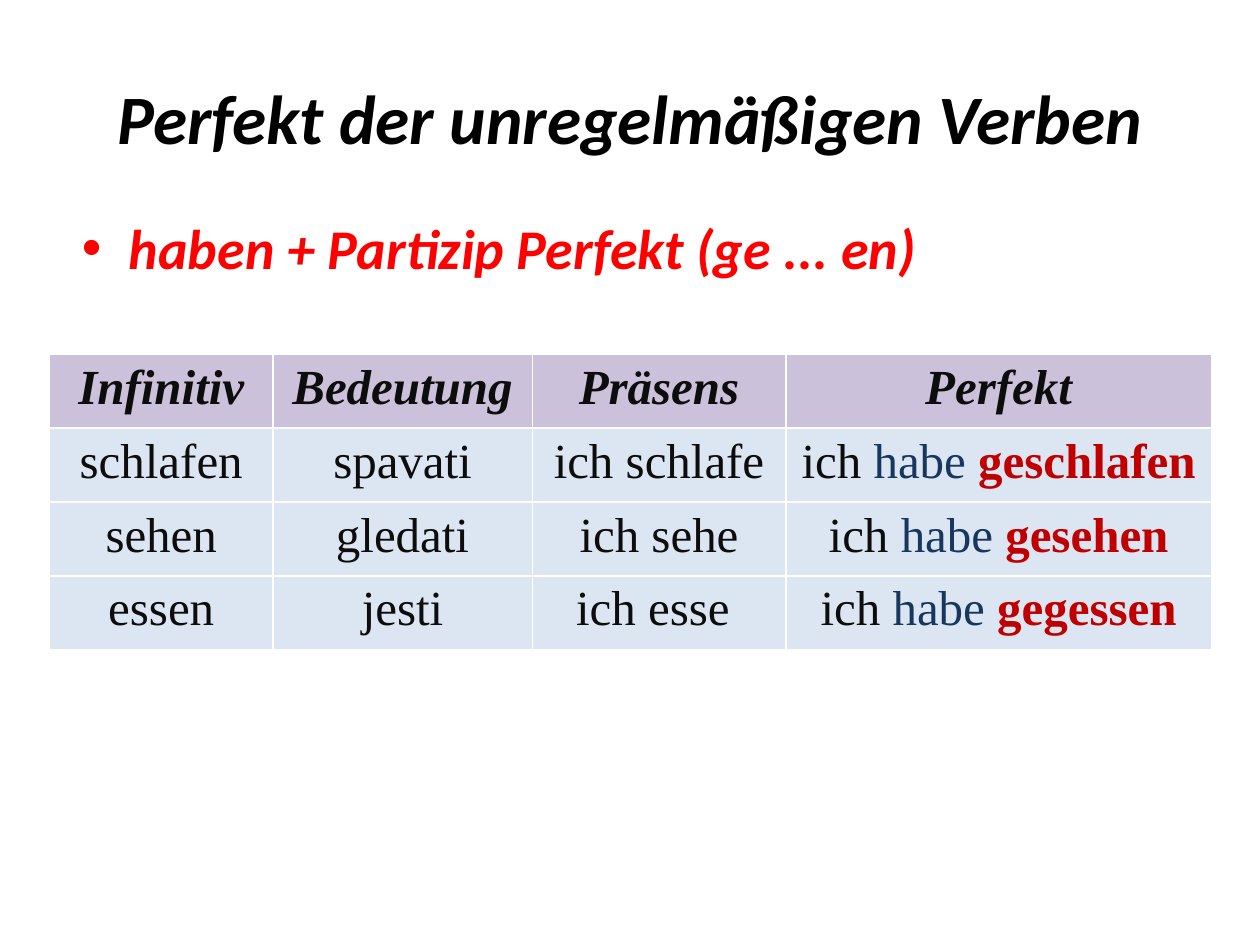
import pptx
import pptx.dml.color
import pptx.enum.text
import pptx.oxml
import pptx.oxml.ns
import pptx.util

Cm = pptx.util.Cm
RGBColor = pptx.dml.color.RGBColor
CENTER = pptx.enum.text.PP_ALIGN.CENTER

BLACK = RGBColor(0x00, 0x00, 0x00)
RED = RGBColor(0xFF, 0x00, 0x00)
INK = RGBColor(0x0D, 0x0D, 0x0D)
NAVY = RGBColor(0x17, 0x37, 0x5E)
DARK_RED = RGBColor(0xC0, 0x00, 0x00)
LILAC = RGBColor(0xCC, 0xC1, 0xDA)
PALE_BLUE = RGBColor(0xDC, 0xE6, 0xF2)


def add_run(paragraph, text, font_name, size, color, bold=False, italic=False):
    run = paragraph.add_run()
    run.text = text
    run.font.name = font_name
    run.font.size = pptx.util.Pt(size)
    run.font.color.rgb = color
    run.font.bold = bold
    run.font.italic = italic


presentation = pptx.Presentation()
presentation.slide_width = Cm(25.4)
presentation.slide_height = Cm(19.05)
slide = presentation.slides.add_slide(presentation.slide_layouts[5])

title = slide.shapes.title
title.left, title.top, title.width, title.height = Cm(1.27), Cm(0.76), Cm(22.86), Cm(3.18)
title.text_frame.vertical_anchor = pptx.enum.text.MSO_ANCHOR.MIDDLE
paragraph = title.text_frame.paragraphs[0]
paragraph.alignment = CENTER
add_run(paragraph, "Perfekt der unregelmäßigen Verben", "Calibri", 39.6, BLACK, True, True)

rule_box = slide.shapes.add_textbox(Cm(1.4), Cm(4.17), Cm(22.86), Cm(12.57))
rule_box.text_frame.word_wrap = True
paragraph = rule_box.text_frame.paragraphs[0]
properties = paragraph._p.get_or_add_pPr()
properties.set("marL", str(Cm(0.95)))
properties.set("indent", str(Cm(-0.95)))
namespace = pptx.oxml.ns.nsdecls("a")
properties.append(pptx.oxml.parse_xml(f'<a:buFont {namespace} typeface="Arial"/>'))
properties.append(pptx.oxml.parse_xml(f'<a:buChar {namespace} char="•"/>'))
add_run(paragraph, "haben + Partizip Perfekt (ge ... en)", "Calibri", 32, RED, True, True)

headings = ["Infinitiv", "Bedeutung", "Präsens", "Perfekt"]
verbs = [
    ["schlafen", "spavati", "ich schlafe", "geschlafen"],
    ["sehen", "gledati", "ich sehe", "gesehen"],
    ["essen", "jesti", "ich esse ", "gegessen"],
]
column_widths = [4.5, 5.23, 5.11, 8.58]
row_height = 1.49

rows = [headings] + verbs
table = slide.shapes.add_table(
    len(rows), len(headings), Cm(1), Cm(7.14), Cm(sum(column_widths)), Cm(row_height * len(rows))
).table
for column, width in zip(table.columns, column_widths):
    column.width = Cm(width)

for row_index, words in enumerate(rows):
    is_header = row_index == 0
    table.rows[row_index].height = Cm(row_height)
    for column_index, word in enumerate(words):
        cell = table.cell(row_index, column_index)
        cell.fill.solid()
        cell.fill.fore_color.rgb = LILAC if is_header else PALE_BLUE
        paragraph = cell.text_frame.paragraphs[0]
        paragraph.alignment = CENTER
        if column_index == 3 and not is_header:
            parts = [("ich ", INK, False), ("habe ", NAVY, False), (word, DARK_RED, True)]
        else:
            parts = [(word, INK, is_header)]
        for text, color, bold in parts:
            add_run(paragraph, text, "Times New Roman", 28, color, bold, is_header)

presentation.save("out.pptx")
